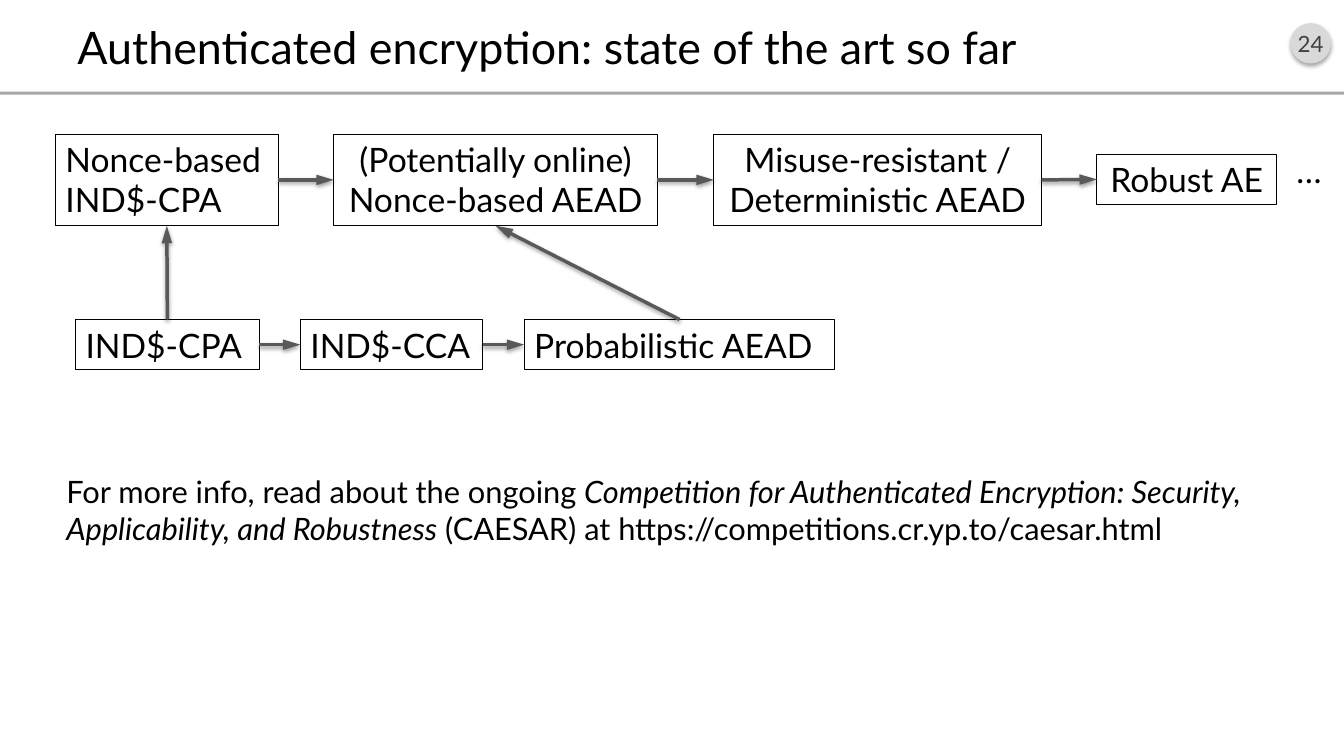
from dataclasses import dataclass

from lxml.etree import SubElement
from pptx import Presentation
from pptx.dml.color import RGBColor
from pptx.enum.shapes import MSO_CONNECTOR, MSO_SHAPE
from pptx.enum.text import MSO_ANCHOR, PP_ALIGN
from pptx.oxml.ns import qn
from pptx.util import Inches, Pt

FONT = "Lato"
COLORS = {
    "text": "000000",
    "arrow": "595959",
    "rule": "A6A6A6",
    "badge": "D9D9D9",
    "badge_text": "404040",
    "shadow": "000000",
}
TOP, LEFT, BOTTOM, RIGHT = range(4)  # connection sites of a rectangle


@dataclass
class Box:
    name: str
    text: str
    x: float
    y: float
    w: float
    h: float
    align: PP_ALIGN = PP_ALIGN.LEFT


@dataclass
class Arrow:
    start: str
    end: str
    start_site: int = RIGHT
    end_site: int = LEFT


BOXES = [
    Box("cpa", "IND$-CPA", 0.75, 3.17, 1.82, 0.5),
    Box("cca", "IND$-CCA", 2.98, 3.17, 1.81, 0.5),
    Box("prob", "Probabilistic AEAD", 5.2, 3.17, 3.08, 0.5),
    Box("nonce_cpa", "Nonce-based\nIND$-CPA", 0.55, 1.33, 2.21, 0.91),
    Box("nonce_aead", "(Potentially online)\nNonce-based AEAD",
        3.31, 1.33, 3.21, 0.91, PP_ALIGN.CENTER),
    Box("misuse", "Misuse-resistant /\nDeterministic AEAD",
        7.08, 1.33, 3.25, 0.91, PP_ALIGN.CENTER),
    Box("robust", "Robust AE", 10.88, 1.53, 1.78, 0.5, PP_ALIGN.CENTER),
]
ARROWS = [
    Arrow("cpa", "cca"),
    Arrow("cca", "prob"),
    Arrow("cpa", "nonce_cpa", TOP, BOTTOM),
    Arrow("prob", "nonce_aead", TOP, BOTTOM),
    Arrow("nonce_cpa", "nonce_aead"),
    Arrow("nonce_aead", "misuse"),
    Arrow("misuse", "robust"),
]


def rgb(name: str) -> RGBColor:
    return RGBColor.from_string(COLORS[name])


def write(sp, text: str, *, size: float = 24, color: str = "text",
          align: PP_ALIGN = PP_ALIGN.LEFT, anchor: MSO_ANCHOR = MSO_ANCHOR.TOP,
          margin: float = 0.1) -> None:
    """Fill a shape: lines become paragraphs, every second *part* is italic."""
    tf = sp.text_frame
    tf.word_wrap = True
    tf.vertical_anchor = anchor
    tf.margin_left = tf.margin_right = Inches(margin)
    for i, line in enumerate(text.split("\n")):
        p = tf.add_paragraph() if i else tf.paragraphs[0]
        p.alignment = align
        for j, part in enumerate(line.split("*")):
            r = p.add_run()
            r.text = part
            r.font.name = FONT
            r.font.size = Pt(size)
            r.font.italic = j % 2 == 1
            r.font.color.rgb = rgb(color)


def add_text(s, x: float, y: float, w: float, h: float, text: str, **fmt) -> None:
    write(s.shapes.add_textbox(Inches(x), Inches(y), Inches(w), Inches(h)), text, **fmt)


def add_plain_shape(s, kind: MSO_SHAPE, x: float, y: float, w: float, h: float,
                    fill: str | None = None):
    """Add a shape without line or shadow, filled only if a colour is given."""
    sp = s.shapes.add_shape(kind, Inches(x), Inches(y), Inches(w), Inches(h))
    sp.line.fill.background()
    sp.shadow.inherit = False
    if fill:
        sp.fill.solid()
        sp.fill.fore_color.rgb = rgb(fill)
    else:
        sp.fill.background()
    return sp


def add_shadow(sp, alpha: int, blur: float, dist: float) -> None:
    spPr = sp._element.spPr
    effects = spPr.find(qn("a:effectLst"))
    if effects is None:
        effects = SubElement(spPr, qn("a:effectLst"))
    shadow = SubElement(effects, qn("a:outerShdw"), blurRad=str(Pt(blur)),
                        dist=str(Pt(dist)), dir="5400000", rotWithShape="0")
    clr = SubElement(shadow, qn("a:srgbClr"), val=COLORS["shadow"])
    SubElement(clr, qn("a:alpha"), val=str(alpha * 1000))


def add_box(s, box: Box):
    sp = add_plain_shape(s, MSO_SHAPE.RECTANGLE, box.x, box.y, box.w, box.h)
    sp.line.color.rgb = rgb("text")
    sp.line.width = Pt(0.75)
    write(sp, box.text, align=box.align)
    return sp


def add_arrow(s, arrow: Arrow, boxes: dict) -> None:
    cn = s.shapes.add_connector(MSO_CONNECTOR.STRAIGHT, 0, 0, 0, 0)
    cn.begin_connect(boxes[arrow.start], arrow.start_site)
    cn.end_connect(boxes[arrow.end], arrow.end_site)
    cn.line.color.rgb = rgb("arrow")
    cn.line.width = Pt(2.5)
    ln = cn._element.spPr.find(qn("a:ln"))
    SubElement(ln, qn("a:tailEnd"), type="triangle", w="med", len="lg")
    add_shadow(cn, 38, 3.1, 1.6)


def main() -> None:
    prs = Presentation()
    prs.slide_width, prs.slide_height = Inches(13.33), Inches(7.5)
    s = prs.slides.add_slide(prs.slide_layouts[6])

    badge = add_plain_shape(s, MSO_SHAPE.OVAL, 12.8, 0.23, 0.4, 0.4, "badge")
    add_shadow(badge, 35, 3.1, 1.8)
    write(badge, "24", size=16, color="badge_text", align=PP_ALIGN.CENTER,
          anchor=MSO_ANCHOR.MIDDLE, margin=0)
    add_plain_shape(s, MSO_SHAPE.RECTANGLE, 0, 0.91, 13.33, 0.03, "rule")
    add_text(s, 0.67, 0.16, 12, 0.6, "Authenticated encryption: state of the art so far",
             size=32, anchor=MSO_ANCHOR.MIDDLE)

    boxes = {box.name: add_box(s, box) for box in BOXES}
    for arrow in ARROWS:
        add_arrow(s, arrow, boxes)

    add_text(s, 12.76, 1.44, 0.46, 0.5, "…")
    add_text(s, 0.56, 4.64, 12.21, 0.84,
             "For more info, read about the ongoing *Competition for Authenticated "
             "Encryption: Security, Applicability, and Robustness* (CAESAR) at "
             "https://competitions.cr.yp.to/caesar.html", size=22)
    prs.save("out.pptx")


if __name__ == "__main__":
    main()
